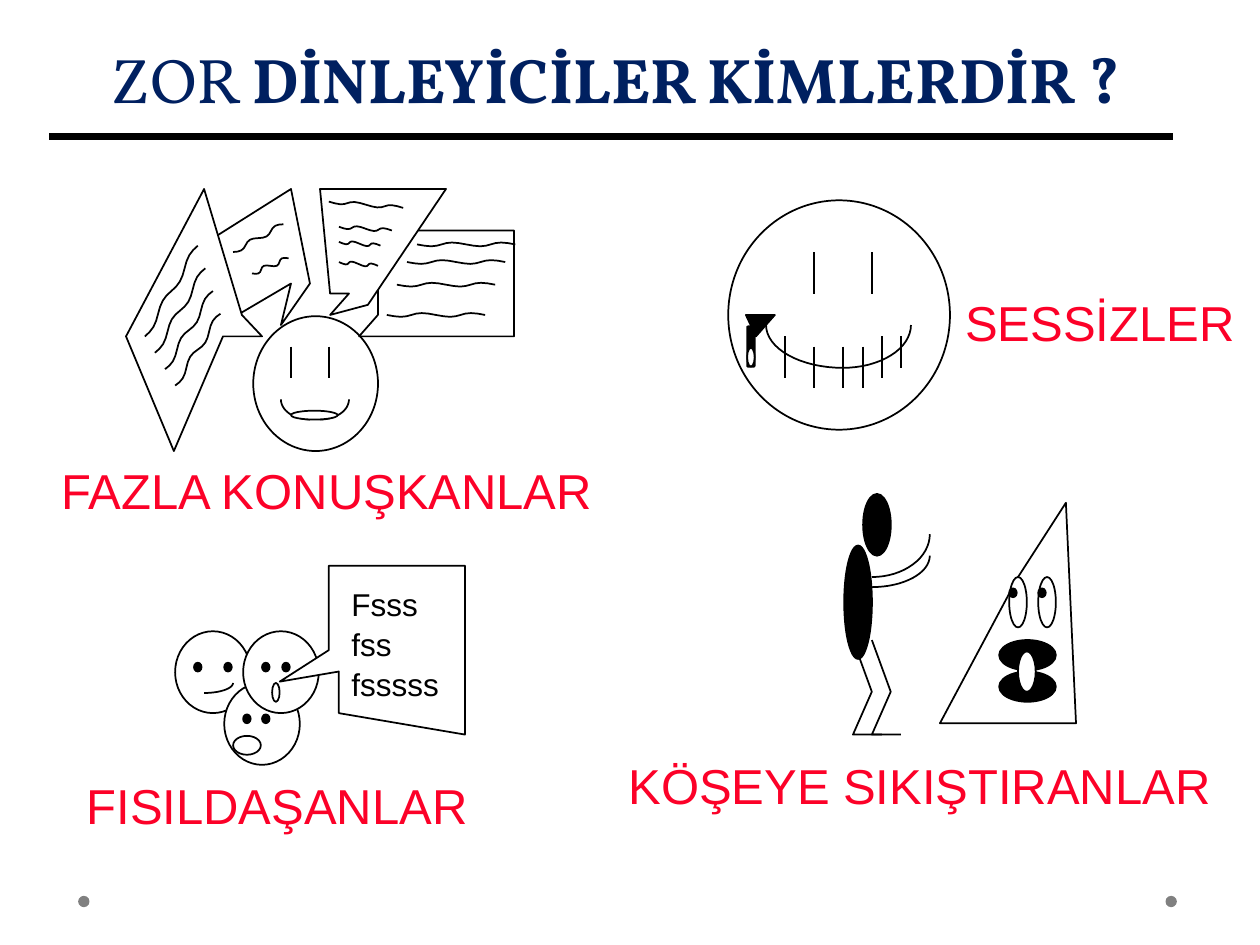
"""Build the slide on difficult kinds of listeners."""
from math import cos, pi, sin

from lxml.etree import SubElement
from pptx import Presentation
from pptx.dml.color import RGBColor
from pptx.enum.shapes import MSO_CONNECTOR, MSO_SHAPE
from pptx.enum.text import MSO_ANCHOR, MSO_AUTO_SIZE, PP_ALIGN
from pptx.oxml.ns import qn
from pptx.util import Pt

PX = 9144
WHITE, BLACK, GREY, NAVY, RED = "FFFFFF", "000000", "808080", "002060", "FC0128"
tint = RGBColor.from_string


def ink(shape, fill):
    shape.shadow.inherit = False
    shape.line.color.rgb = tint(BLACK)
    shape.line.width = Pt(1)
    if fill:
        shape.fill.solid()
        shape.fill.fore_color.rgb = tint(fill)
    else:
        shape.fill.background()


def curve(x, y, wide, high):
    turns = [pi / 2 * step / 16 for step in range(17)]
    return [(x + wide * cos(turn), y + high * sin(turn)) for turn in turns]


deck = Presentation()
deck.slide_width, deck.slide_height = 1000 * PX, 750 * PX
slide = deck.slides.add_slide(deck.slide_layouts[5])
page = slide.shapes
mob = page.add_group_shape().shapes
duo = page.add_group_shape().shapes

title = page.title
title.left, title.top, title.width, title.height = 31 * PX, 0, 915 * PX, 125 * PX
title.text_frame.vertical_anchor = MSO_ANCHOR.MIDDLE
para = title.text_frame.paragraphs[0]
para.alignment = PP_ALIGN.CENTER
for text, bold in (("ZOR ", False), ("DİNLEYİCİLER KİMLERDİR ?", True)):
    run = para.add_run()
    run.text = text
    run.font.name, run.font.size, run.font.bold = "Vollkorn", Pt(36), bold
    run.font.color.rgb = tint(NAVY)

for left in (925, 62):
    dot = page.add_shape(MSO_SHAPE.OVAL, left * PX, 711 * PX, 9 * PX, 9 * PX)
    ink(dot, GREY)
    dot.line.fill.background()

talk = [
    ((201, 251, 99, 107), WHITE),
    (curve(254, 317, 23, 16), None),
    (curve(246, 317, -23, 16), None),
    ([(285, 267), (300, 250), (300, 183), (408, 183), (408, 267), (308, 267)], WHITE),
    ([(223, 258), (246, 225), (231, 150), (139, 208), (146, 275), (231, 225)], WHITE),
    ([(262, 250), (292, 242), (354, 150), (254, 150), (262, 233), (277, 233)], WHITE),
    ([(208, 267), (192, 250), (162, 150), (100, 267), (138, 358), (177, 267)], WHITE),
    ((231, 326, 37, 7), WHITE),
]
words = [(261, 160, 59, 5), (185, 200, 40, -22), (200, 217, 29, -12)]
words += [(269, y, wide, 3) for y, wide in ((180, 42), (192, 33), (208, 31))]
words += [(331 - 8 * row, y, 78, 0) for row, y in enumerate((194, 208, 226, 250))]
words += [(115 + 8 * row, 267 + 13 * row, 42 - 2 * row, 5 * row - 72) for row in range(4)]
for x, y, wide, rise in words:
    steps = [step / 16 for step in range(17)]
    waves = [1.5 * sin(4 * pi * step) for step in steps]
    line = [(x + wide * step + wave, y + rise * step + wave) for step, wave in zip(steps, waves)]
    talk.append((line, None))

quiet = [
    ((578, 159, 176, 182), WHITE),
    (curve(669, 258, -61, 34), None),
    (curve(669, 258, 54, 34), None),
    ([(592, 250), (615, 250), (600, 267)], BLACK),
]
crowd = [((x, y, 60, 65), WHITE) for x, y in ((139, 501), (178, 542), (193, 501))]
for y, eyes in ((526, (178, 154, 224, 208)), (567, (208, 193))):
    crowd += [((x, y, 6, 7), BLACK) for x in eyes]
crowd += [
    (curve(162, 542, 23, 8), None),
    ((185, 584, 22, 15), WHITE),
    ((216, 542, 6, 15), WHITE),
    ([(222, 541), (261, 516), (261, 449), (369, 449), (369, 583), (269, 566), (269, 533)], WHITE),
]
pair = [((685, 392, 22, 49), BLACK), ((670, 433, 22, 90), BLACK)]
pair += [([(x, 508), (x + 15, 549), (x, 583), (x + 23, 583)], None) for x in (677, 692)]
pair += [([(746, 574), (854, 574), (846, 399), (808, 458)], WHITE)]
pair += [((x, 458, 14, 40), WHITE) for x in (801, 824)]
pair += [((793, y, 45, 24), BLACK) for y in (508, 533)]
pair += [((808, 517, 14, 32), WHITE)]
pair += [((x, 467, 6, 7), BLACK) for x in (824, 801)]
pair += [(curve(692, y, 46, high), None) for y, high in ((424, 34), (441, 25))]

for home, parts in ((page, talk + quiet), (mob, crowd), (duo, pair)):
    for part, fill in parts:
        if isinstance(part, tuple):
            shape = home.add_shape(MSO_SHAPE.OVAL, *[side * PX for side in part])
        else:
            spots = [(x * PX, y * PX) for x, y in part]
            path = home.build_freeform(*spots[0])
            path.add_line_segments(spots[1:], close=bool(fill))
            shape = path.convert_to_shape()
        ink(shape, fill)

grip = page.add_shape(MSO_SHAPE.ROUNDED_RECTANGLE, 593 * PX, 259 * PX, 6 * PX, 32 * PX)
grip.adjustments[0] = 0.125
ink(grip, BLACK)
hole = page.add_shape(MSO_SHAPE.OVAL, 593 * PX, 276 * PX, 6 * PX, 15 * PX)
ink(hole, WHITE)

bars = [(39, 108, 931, 108, 4), (715, 267, 715, 292, 1)]
for top, high, spots in (
    (275, 25, (231, 261)),
    (200, 33, (646, 692)),
    (267, 33, (623, 700)),
    (275, 33, (646, 669, 685)),
):
    bars += [(x, top, x, top + high, 1) for x in spots]
for *ends, thick in bars:
    bar = page.add_connector(MSO_CONNECTOR.STRAIGHT, *[end * PX for end in ends])
    bar.line.color.rgb = tint(BLACK)
    bar.line.width = Pt(thick)
    SubElement(bar._element.spPr, qn("a:effectLst"))

left, mid = PP_ALIGN.LEFT, PP_ALIGN.CENTER
for home, box, text, size, color, align in (
    (page, (39, 358, 485, 57), "FAZLA KONUŞKANLAR", 28, RED, left),
    (page, (746, 225, 254, 57), "SESSİZLER", 28, RED, mid),
    (page, (59, 608, 364, 57), "FISILDAŞANLAR", 28, RED, left),
    (mob, (269, 458, 92, 101), "Fsss fss fsssss", 18, BLACK, left),
    (page, (489, 592, 492, 57), "KÖŞEYE SIKIŞTIRANLAR", 28, RED, left),
):
    frame = home.add_textbox(*[side * PX for side in box]).text_frame
    frame.word_wrap = True
    frame.auto_size = MSO_AUTO_SIZE.SHAPE_TO_FIT_TEXT
    para = frame.paragraphs[0]
    para.alignment, para.line_spacing = align, 1.05
    run = para.add_run()
    run.text = text
    run.font.name, run.font.size = "Arial", Pt(size)
    run.font.color.rgb = tint(color)

deck.save("out.pptx")
